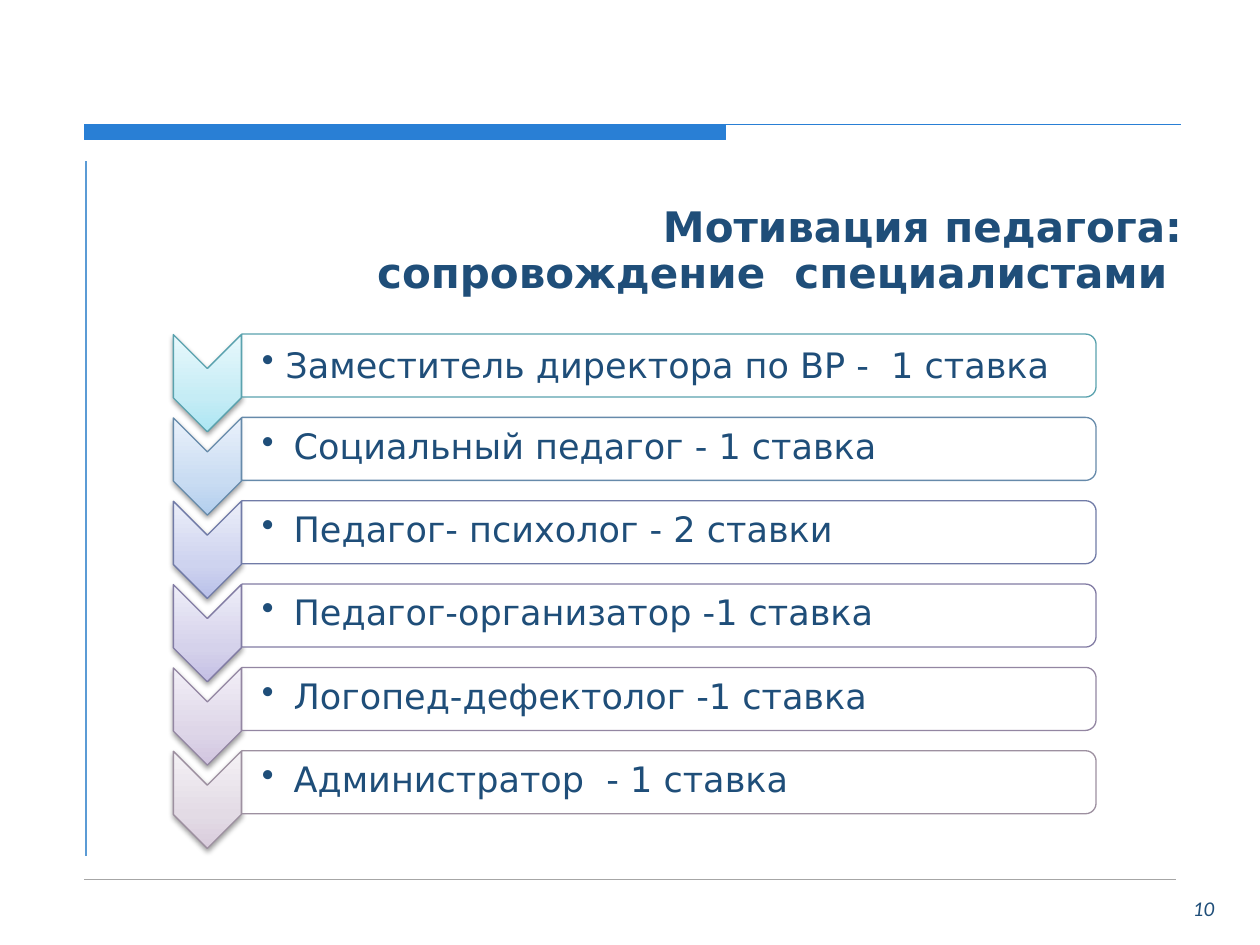
"""Build a slide that lists the specialists who support a teacher."""
import copy

import pptx
import pptx.dml.color
import pptx.enum.shapes
import pptx.enum.text
import pptx.oxml
import pptx.oxml.ns
import pptx.oxml.xmlchemy
import pptx.util

Cm = pptx.util.Cm
Pt = pptx.util.Pt
RGB = pptx.dml.color.RGBColor
KIND = pptx.enum.shapes.MSO_SHAPE
ALIGN = pptx.enum.text.PP_ALIGN
MIDDLE = pptx.enum.text.MSO_ANCHOR.MIDDLE
qn = pptx.oxml.ns.qn
make = pptx.oxml.xmlchemy.OxmlElement

BLUE = RGB(0x29, 0x7F, 0xD5)
SKY = RGB(0x5B, 0x9B, 0xD5)
NAVY = RGB(0x1F, 0x4E, 0x79)
GRAY = RGB(0xA6, 0xA6, 0xA6)
WHITE = RGB(0xFF, 0xFF, 0xFF)
ROWS = [
    (" Заместитель директора по ВР -  1 ставка", RGB(0x5A, 0xA2, 0xAE),
     (RGB(0xAC, 0xE6, 0xF3), RGB(0xC5, 0xEC, 0xF5), RGB(0xE8, 0xF8, 0xFC))),
    ("Социальный педагог - 1 ставка", RGB(0x66, 0x8A, 0xAA),
     (RGB(0xB2, 0xCE, 0xEE), RGB(0xC9, 0xDC, 0xF2), RGB(0xEA, 0xF1, 0xFB))),
    ("Педагог- психолог - 2 ставки", RGB(0x71, 0x7B, 0xA7),
     (RGB(0xB9, 0xC0, 0xE9), RGB(0xCE, 0xD3, 0xEF), RGB(0xEB, 0xEE, 0xF9))),
    ("Педагог-организатор -1 ставка", RGB(0x82, 0x7C, 0xA4),
     (RGB(0xC4, 0xBF, 0xE4), RGB(0xD5, 0xD2, 0xEB), RGB(0xEE, 0xED, 0xF8))),
    ("Логопед-дефектолог -1 ставка", RGB(0x93, 0x86, 0xA2),
     (RGB(0xD1, 0xC5, 0xE0), RGB(0xDE, 0xD6, 0xE8), RGB(0xF2, 0xEF, 0xF7))),
    ("Администратор  - 1 ставка", RGB(0x9D, 0x90, 0xA0),
     (RGB(0xD9, 0xCC, 0xDC), RGB(0xE3, 0xDB, 0xE5), RGB(0xF4, 0xF1, 0xF5))),
]
STEP = 1.68
SHADE = (
    '<a:outerShdw xmlns:a="http://schemas.openxmlformats.org/drawingml/2006/main"'
    ' blurRad="40000" dist="20000" dir="5400000" rotWithShape="0">'
    '<a:srgbClr val="000000"><a:alpha val="38000"/></a:srgbClr></a:outerShdw>'
)


def add_text(place, text, size, face="DejaVu Sans"):
    box = shapes.add_textbox(*map(Cm, place))
    frame = box.text_frame
    frame.word_wrap = True
    para = frame.paragraphs[0]
    run = para.add_run()
    run.text = text
    run.font.size = Pt(size)
    run.font.name = face
    run.font.color.rgb = NAVY
    return frame, para, run.font


def add_turned(kind, place, edge):
    shape = shapes.add_shape(kind, *map(Cm, place))
    shape.rotation = 90
    shape.shadow.inherit = False
    shape.line.color.rgb = edge
    shape.line.width = Pt(0.75)
    return shape


deck = pptx.Presentation()
deck.slide_width = Cm(25.4)
deck.slide_height = Cm(19.05)
slide = deck.slides.add_slide(deck.slide_layouts[6])
shapes = slide.shapes

left, mid, right, top, low = map(Cm, (1.7, 14.63, 23.8, 2.51, 2.82))
pen = shapes.build_freeform(left, top)
pen.add_line_segments([(mid, top), (mid, low), (left, low)], close=True)
pen.move_to(left, top)
pen.add_line_segments([(right, top)], close=False)
band = pen.convert_to_shape()
band.shadow.inherit = False
band.fill.solid()
band.fill.fore_color.rgb = BLUE
band.line.color.rgb = BLUE
band.line.width = Pt(0.75)

for ends, color, width in [
    ((1.7, 17.73, 23.7, 17.73), GRAY, 0.25),
    ((1.73, 3.25, 1.73, 17.25), SKY, 1.5),
]:
    rule = shapes.add_connector(
        pptx.enum.shapes.MSO_CONNECTOR.STRAIGHT, *map(Cm, ends))
    rule.line.color.rgb = color
    rule.line.width = Pt(width)
    rule._element.spPr.append(make("a:effectLst"))

frame, para, font = add_text((23.8, 17.93, 1.09, 0.84), "10", 12, "Calibri")
para.alignment = ALIGN.JUSTIFY
font.italic = True

frame, para, font = add_text(
    (6.25, 2.92, 17.58, 3.81),
    "Мотивация педагога: сопровождение  специалистами ", 24)
frame.vertical_anchor = MIDDLE
frame.margin_left = frame.margin_right = frame.margin_bottom = 0
frame.margin_top = Cm(0.5)
para.alignment = ALIGN.RIGHT
para.line_spacing = 0.9
font.bold = True

for row, (text, edge, tones) in enumerate(ROWS):
    drop = row * STEP

    arrow = add_turned(KIND.CHEVRON, (3.2, 7.04 + drop, 1.96, 1.37), edge)
    arrow.fill.gradient()
    arrow.fill.gradient_angle = 90
    props = arrow._element.spPr
    grad = props.find(qn("a:gradFill"))
    grad.set("rotWithShape", "0")
    stops = grad.find(qn("a:gsLst"))
    stops.append(copy.deepcopy(stops[0]))
    for stop, tone, spot in zip(arrow.fill.gradient_stops, tones, (0, 0.35, 1)):
        stop.color.rgb = tone
        stop.position = spot
    props.find(qn("a:effectLst")).append(pptx.oxml.parse_xml(SHADE))

    bar = add_turned(
        KIND.ROUND_2_SAME_RECTANGLE, (12.85, -1.24 + drop, 1.27, 17.22), edge)
    bar.fill.solid()
    bar.fill.fore_color.rgb = WHITE
    alpha = make("a:alpha")
    alpha.set("val", "90000")
    bar._element.spPr.find(qn("a:solidFill"))[0].append(alpha)

    frame, para, font = add_text((4.88, 6.78 + drop, 17.17, 1.14), text, 20)
    frame.vertical_anchor = MIDDLE
    frame.margin_left = Cm(0.4)
    frame.margin_right = frame.margin_top = frame.margin_bottom = Cm(0.03)
    indent = Cm(0.64) if row else 0
    if row:
        para.line_spacing = 0.9
        para.space_after = Pt(3)
    style = para._p.get_or_add_pPr()
    style.set("marL", str(indent))
    style.set("indent", str(-indent))
    mark = make("a:buChar")
    mark.set("char", "•")
    style.append(mark)

deck.save("out.pptx")
